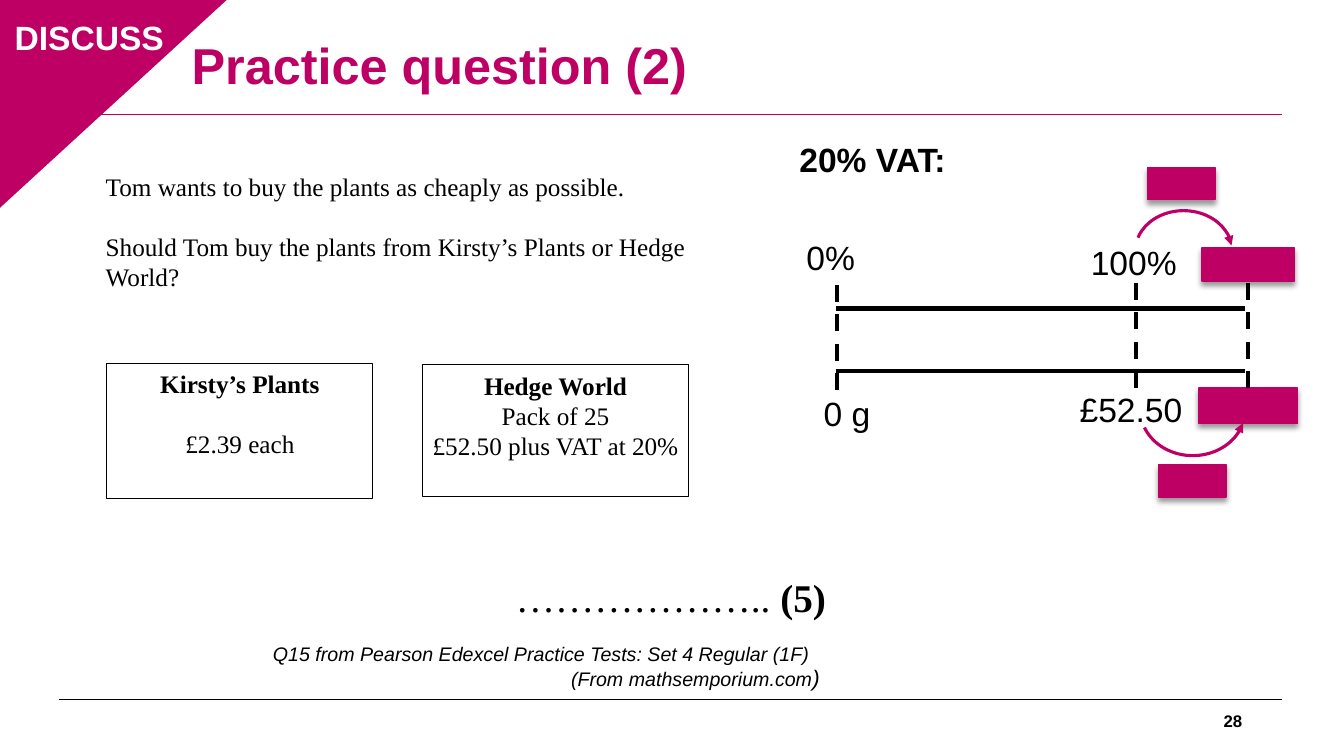
from lxml import etree
from pptx import Presentation
from pptx.dml.color import RGBColor
from pptx.enum.dml import MSO_LINE_DASH_STYLE as Dash
from pptx.enum.shapes import MSO_CONNECTOR as Connector, MSO_SHAPE as Shape
from pptx.enum.text import MSO_ANCHOR as Anchor, PP_ALIGN as Align
from pptx.oxml.ns import qn
from pptx.util import Inches, Pt

THEME = {
    "accent": RGBColor(0xBE, 0x00, 0x64),
    "ink": RGBColor(0, 0, 0),
    "paper": RGBColor(255, 255, 255),
    "sans": "Arial",
    "serif": "Times New Roman",
    "title": Pt(36), "answer": Pt(28), "label": Pt(24), "body": Pt(18),
    "bracket": Pt(16), "source": Pt(14), "number": Pt(12),
    "thin": Pt(0.75), "edge": Pt(1), "arc": Pt(2.25), "thick": Pt(3),
    "gap": Pt(21),
}

LABEL = {"size": THEME["label"], "name": THEME["sans"]}
BOLD_LABEL = {**LABEL, "bold": True}
BODY = {"size": THEME["body"], "name": THEME["serif"]}
ANSWER = {"size": THEME["answer"], "name": THEME["serif"]}
SOURCE = {"size": THEME["source"], "name": THEME["sans"], "italic": True}

TITLE = "Practice question (2)"
QUESTION = [
    "Tom wants to buy the plants as cheaply as possible.",
    "Should Tom buy the plants from Kirsty’s Plants or Hedge World?",
]
SHOPS = [
    ((1.06, 3.61, 2.64, 1.34), ["Kirsty’s Plants", "£2.39 each"], THEME["gap"]),
    ((4.19, 3.62, 2.64, 1.31), ["Hedge World", "Pack of 25", "£52.50 plus VAT at 20%"], Pt(0)),
]
SCALE_LABELS = [
    ("0%", 7.9, 2.3, 0.96),
    ("0 g", 8.07, 3.85, 1.04),
    ("100%", 10.72, 2.35, 1.41),
    ("£52.50", 10.61, 3.81, 1.43),
]
ANSWER_LINES = [
    ((0.32, 5.64, 7.97, 0.55), [("……………….. ", ANSWER), ("(5)", {**ANSWER, "bold": True})]),
    ((0.32, 6.32, 7.81, 0.34),
     [("Q15 from Pearson Edexcel Practice Tests: Set 4 Regular (1F)", SOURCE)]),
    ((0.32, 6.54, 7.91, 0.36),
     [("(From mathsemporium.com", SOURCE), (")", {**SOURCE, "size": THEME["bracket"]})]),
]
RULES = [(6.94, "ink"), (1.14, "accent")]
SCALE_BARS = [3.06, 3.68]
SCALE_TICKS = [(8.3, 3.87, 2.81), (11.27, 3.85, 2.78)]
ARCS = [
    ((11.26, 2.09, 0.96, 0.8), 0, (117.73, 212.02), "tailEnd"),
    ((11.31, 3.61, 1.04, 0.91), 180, (116.83, 203.97), "headEnd"),
]
COVERS = {
    "new price": (11.89, 3.85, 0.98, 0.35),
    "new percent": (11.92, 2.46, 0.92, 0.33),
    "upper multiplier": (11.38, 1.66, 0.67, 0.32),
    "lower multiplier": (11.49, 4.61, 0.67, 0.32),
}

deck = Presentation()
deck.slide_width, deck.slide_height = Inches(13.33), Inches(7.5)
page = deck.slides.add_slide(deck.slide_layouts[5])


def inches(values):
    return [Inches(value) for value in values]


def add_span(para, text, values, color="ink"):
    span = para.add_run()
    span.text = text
    for name, value in values.items():
        setattr(span.font, name, value)
    span.font.color.rgb = THEME[color]


def add_box(place, spans, align=Align.LEFT, color="ink"):
    box = page.shapes.add_textbox(*inches(place))
    box.text_frame.word_wrap = True
    para = box.text_frame.paragraphs[0]
    para.alignment = align
    for text, values in spans:
        add_span(para, text, values, color)
    return box


def fill_lines(frame, lines, gap, align, first_bold=False):
    for index, text in enumerate(lines):
        para = frame.paragraphs[0] if index == 0 else frame.add_paragraph()
        para.alignment = align
        if index:
            para.space_before = gap
        add_span(para, text, {**BODY, "bold": first_bold and index == 0})


def add_line(start, end, color, width, dash=None):
    line = page.shapes.add_connector(Connector.STRAIGHT, *inches(start + end))
    line.line.color.rgb = THEME[color]
    line.line.width = THEME[width]
    if dash:
        line.line.dash_style = dash
    etree.SubElement(line._element.spPr, qn("a:effectLst"))
    return line


def add_outline(kind, place, fill, color, width):
    shape = page.shapes.add_shape(kind, *inches(place))
    shape.shadow.inherit = False
    if fill:
        shape.fill.solid()
        shape.fill.fore_color.rgb = THEME[fill]
    else:
        shape.fill.background()
    shape.line.color.rgb = THEME[color]
    shape.line.width = THEME[width]
    return shape


def add_shadow(shape):
    effects = shape._element.spPr.find(qn("a:effectLst"))
    shadow = etree.SubElement(effects, qn("a:outerShdw"), blurRad=str(Pt(4)),
                              dist=str(Pt(3)), dir="5400000", rotWithShape="0")
    tint = etree.SubElement(shadow, qn("a:srgbClr"), val=str(THEME["ink"]))
    etree.SubElement(tint, qn("a:alpha"), val="40000")


for height, color in RULES:
    add_line((0.59, height), (12.72, height), color, "thin")

title = page.shapes.title
title.left, title.top, title.width, title.height = inches((1.8, 0.12, 8.69, 1.11))
title.text_frame.vertical_anchor = Anchor.MIDDLE
title_para = title.text_frame.paragraphs[0]
title_para.alignment = Align.LEFT
title_para.line_spacing = 0.9
add_span(title_para, TITLE, {"size": THEME["title"], "name": THEME["sans"], "bold": True}, "accent")

corner = add_outline(Shape.ISOSCELES_TRIANGLE, (-0.03, -0.02, 2.29, 2.1), "accent", "accent", "edge")
corner.adjustments[0] = 0
corner._element.spPr.xfrm.set("flipV", "1")
add_box((-0.09, 0.12, 1.95, 0.5), [("DISCUSS", BOLD_LABEL)], Align.CENTER, "paper")

heading = add_box((7.83, 1.3, 1.96, 0.5), [("20% VAT:", BOLD_LABEL)])
heading.text_frame.paragraphs[0].line_spacing = Pt(31)

for text, left, top, width in SCALE_LABELS:
    add_box((left, top, width, 0.5), [(text, LABEL)])
for height in SCALE_BARS:
    add_line((8.29, height), (12.35, height), "ink", "thick")
for across, bottom, top in SCALE_TICKS:
    add_line((across, bottom), (across, top), "ink", "thick", Dash.DASH)

covers = {}
for name, place in COVERS.items():
    covers[name] = add_outline(Shape.RECTANGLE, place, "accent", "accent", "edge")
    add_shadow(covers[name])
new_tick = add_line((12.38, 3.85), (12.38, 2.79), "ink", "thick", Dash.DASH)
new_tick.begin_connect(covers["new price"], 0)
new_tick.end_connect(covers["new percent"], 2)

for place, turn, angles, arrow_end in ARCS:
    arc = add_outline(Shape.ARC, place, None, "accent", "arc")
    arc.rotation = turn
    for index, angle in enumerate(angles):
        arc.adjustments[index] = angle
    etree.SubElement(arc.line._get_or_add_ln(), qn("a:" + arrow_end), type="triangle")

question = page.shapes.add_textbox(*inches((0.95, 1.65, 6.72, 1.31)))
question.text_frame.word_wrap = True
fill_lines(question.text_frame, QUESTION, THEME["gap"], Align.LEFT)
for place, lines, gap in SHOPS:
    shop = add_outline(Shape.RECTANGLE, place, None, "ink", "thin")
    shop.text_frame.word_wrap = True
    shop.text_frame.vertical_anchor = Anchor.TOP
    fill_lines(shop.text_frame, lines, gap, Align.CENTER, True)

for place, spans in ANSWER_LINES:
    add_box(place, spans, Align.RIGHT)
number = add_box((9.42, 6.95, 3, 0.4),
                 [("28", {"size": THEME["number"], "name": THEME["sans"], "bold": True})], Align.RIGHT)
number.text_frame.vertical_anchor = Anchor.MIDDLE

deck.save("out.pptx")
